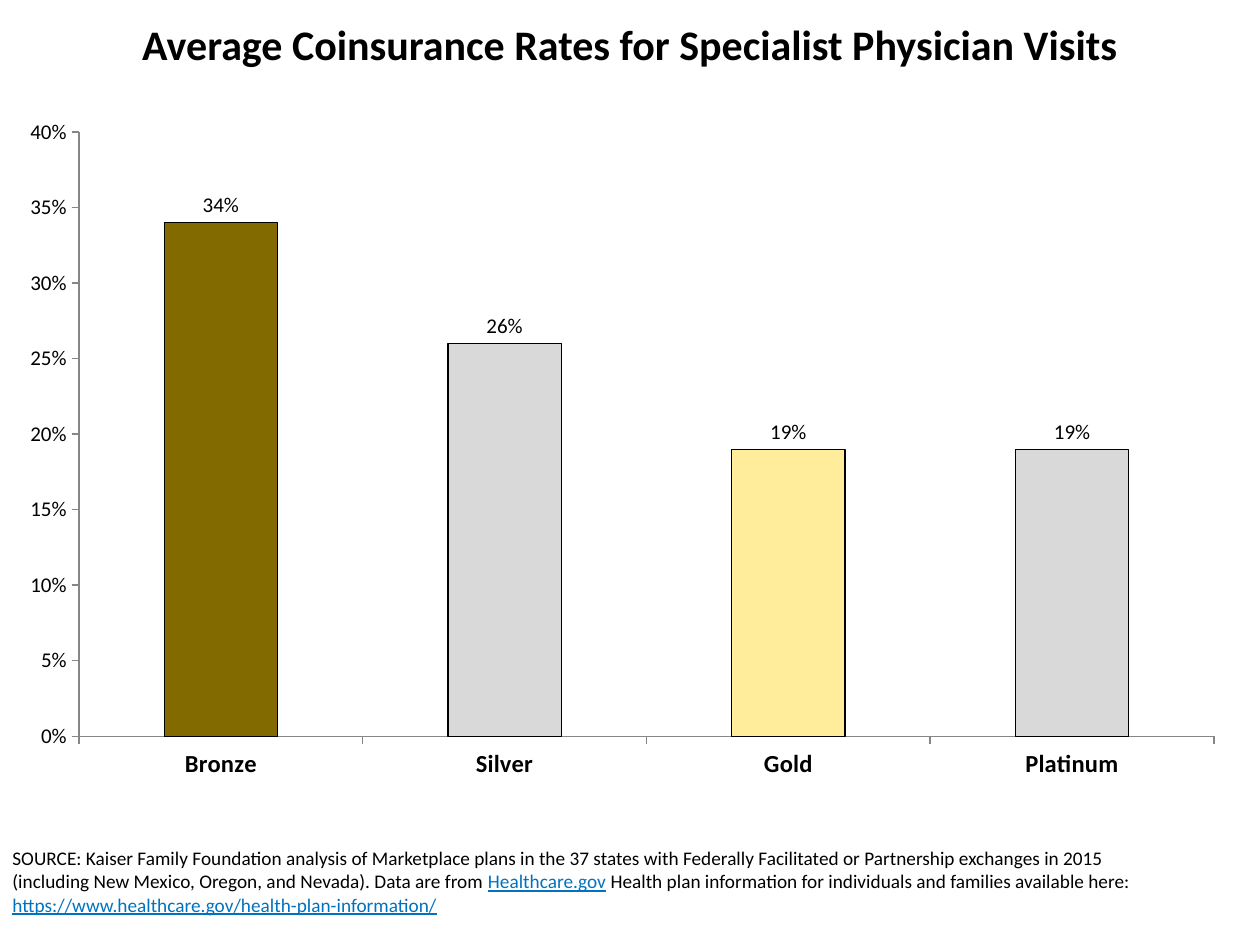
from lxml.etree import SubElement as Sub
from pptx import Presentation as Deck
from pptx.chart.data import CategoryChartData as Data
from pptx.dml.color import RGBColor as RGB
from pptx.enum.chart import XL_CHART_TYPE as Kind, XL_LABEL_POSITION as Spot, XL_TICK_MARK as Tick
from pptx.enum.text import MSO_ANCHOR as Anchor, PP_ALIGN as Align
from pptx.oxml.ns import qn
from pptx.util import Inches, Pt

COLS, ROWS = 100, 75
BLACK, LINK, GREY = "000000", "0072C0", "868686"
TIERS = {"Bronze": (0.34, "826A00"), "Silver": (0.26, "D9D9D9"),
         "Gold": (0.19, "FFED9B"), "Platinum": (0.19, "D9D9D9")}
SOURCE = [
    ("SOURCE: Kaiser Family Foundation analysis of Marketplace plans in the 37 states "
     "with Federally Facilitated or Partnership exchanges in 2015 (including New Mexico, "
     "Oregon, and Nevada). Data are from ", False),
    ("Healthcare.gov", True),
    (" Health plan information for individuals and families available here: ", False),
    ("https://www.healthcare.gov/health-plan-information/", True),
]


def color(code):
    return RGB.from_string(code)


def apply(item, form):
    for name, value in form.items():
        setattr(item, name, value)


class Page:
    face = "Calibri"

    def __init__(self, deck):
        self.wide, self.high = deck.slide_width, deck.slide_height
        self.slide = deck.slides.add_slide(deck.slide_layouts[5])

    def box(self, col, row, cols, rows):
        return (round(self.wide * col / COLS), round(self.high * row / ROWS),
                round(self.wide * cols / COLS), round(self.high * rows / ROWS))

    def font(self, font, size, code=BLACK, **form):
        apply(font, {"name": self.face, "size": Pt(size), **form})
        font.color.rgb = color(code)

    def title(self, text, *area):
        shape = self.slide.shapes.title
        apply(shape, dict(zip(("left", "top", "width", "height"), self.box(*area))))
        frame = shape.text_frame
        apply(frame, {"text": text, "word_wrap": True, "vertical_anchor": Anchor.TOP})
        para = frame.paragraphs[0]
        para.alignment = Align.CENTER
        self.font(para.runs[0].font, 24, bold=True)

    def note(self, parts, *area):
        frame = self.slide.shapes.add_textbox(*self.box(*area)).text_frame
        frame.word_wrap = True
        for text, link in parts:
            run = frame.paragraphs[0].add_run()
            run.text = text
            self.font(run.font, 11, LINK if link else BLACK, underline=link)

    def chart(self, tiers, inner, *area):
        data = Data(number_format="0%")
        data.categories = list(tiers)
        data.add_series("Series 1", [value for value, _ in tiers.values()])
        chart = self.slide.shapes.add_chart(
            Kind.COLUMN_CLUSTERED, *self.box(*area), data).chart
        apply(chart, {"has_legend": False, "has_title": False})
        self.font(chart.font, 12)
        self.axes(chart)
        self.bars(chart.plots[0], tiers)
        self.place(chart, inner)

    def axes(self, chart):
        forms = {
            chart.value_axis: {"minimum_scale": 0, "maximum_scale": 0.4, "major_unit": 0.05},
            chart.category_axis: {},
        }
        for axis, form in forms.items():
            apply(axis, {"has_major_gridlines": False, "major_tick_mark": Tick.OUTSIDE,
                         "minor_tick_mark": Tick.NONE, **form})
            axis.format.line.color.rgb = color(GREY)
            axis.format.line.width = Pt(0.75)
        apply(chart.value_axis.tick_labels,
              {"number_format": "0%", "number_format_is_linked": False})
        self.font(chart.value_axis.tick_labels.font, 12)
        self.font(chart.category_axis.tick_labels.font, 14, bold=True)

    def bars(self, plot, tiers):
        apply(plot, {"gap_width": 150, "vary_by_categories": False, "has_data_labels": True})
        apply(plot.data_labels, {"show_value": True, "number_format": "0%",
                                 "number_format_is_linked": False,
                                 "position": Spot.OUTSIDE_END})
        self.font(plot.data_labels.font, 12)
        for spot, (_, code) in enumerate(tiers.values()):
            form = plot.series[0].points[spot].format
            form.fill.solid()
            form.fill.fore_color.rgb = color(code)
            form.line.color.rgb = color(BLACK)
            form.line.width = Pt(0.75)

    def place(self, chart, inner):
        area = chart.element.find(".//" + qn("c:plotArea"))
        for old in area.findall(qn("c:layout")):
            area.remove(old)
        layout = Sub(area, qn("c:layout"))
        area.insert(0, layout)
        manual = Sub(layout, qn("c:manualLayout"))
        values = {"layoutTarget": "inner", "xMode": "edge", "yMode": "edge",
                  **dict(zip("xywh", inner))}
        for name, value in values.items():
            Sub(manual, qn("c:" + name)).set("val", str(value))


def main():
    deck = Deck()
    deck.slide_width, deck.slide_height = Inches(10), Inches(7.5)
    page = Page(deck)
    page.note(SOURCE, 0, 66.7, 92.5, 8.4)
    page.title("Average Coinsurance Rates for Specialist Physician Visits", 1, 1, 98, 10)
    page.chart(TIERS, (0.06, 0.04, 0.92, 0.88), 0.4, 8.3, 97.9, 54.5)
    deck.save("out.pptx")


if __name__ == "__main__":
    main()
